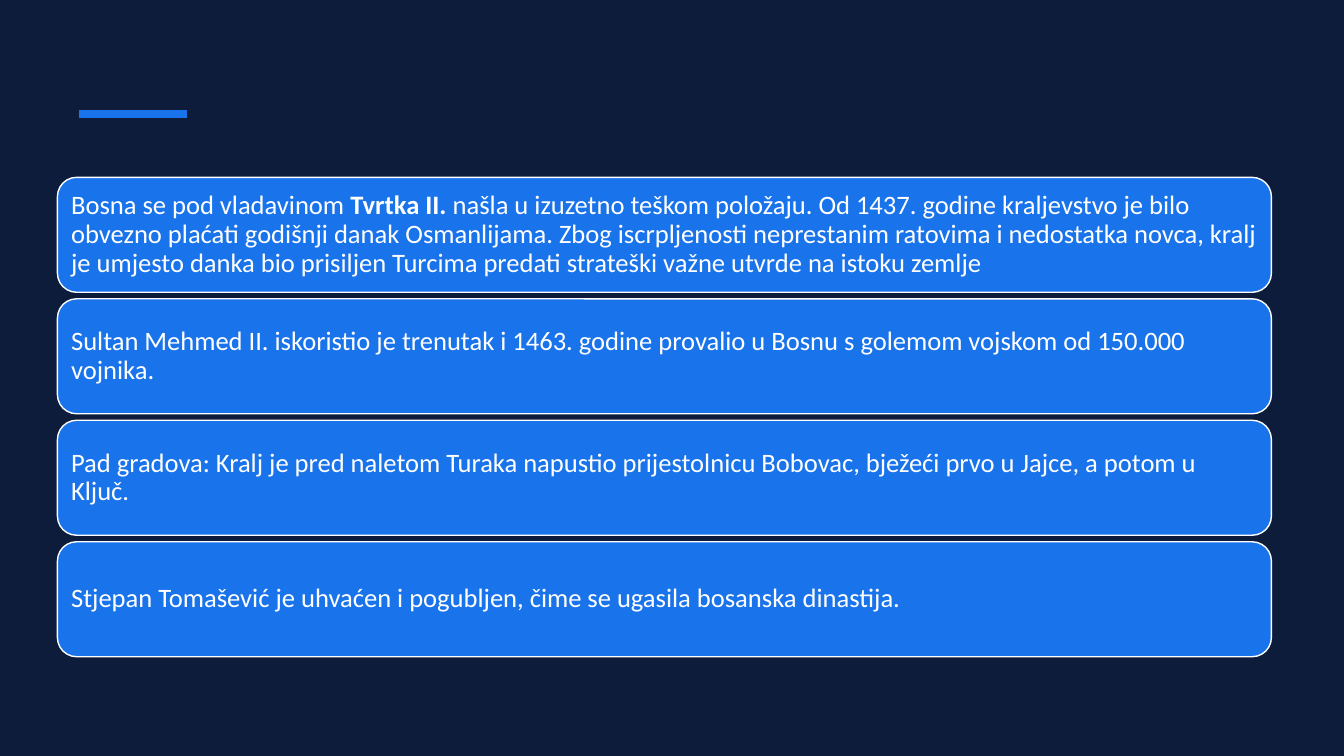
from pptx import Presentation
from pptx.dml.color import RGBColor
from pptx.enum.shapes import MSO_CONNECTOR, MSO_SHAPE
from pptx.enum.text import MSO_ANCHOR, PP_ALIGN
from pptx.oxml.ns import qn
from pptx.util import Inches, Pt
from lxml.etree import SubElement

COLORS = {"background": "0D1C3B", "accent": "1973EB", "light": "FFFFFF"}

# Each event is a list of (text, bold) runs.
EVENTS = [
    [
        ("Bosna se pod vladavinom ", False),
        ("Tvrtka II. ", True),
        ("našla u izuzetno teškom položaju. Od 1437. godine kraljevstvo je bilo "
         "obvezno plaćati godišnji danak Osmanlijama. Zbog iscrpljenosti "
         "neprestanim ratovima i nedostatka novca, kralj je umjesto danka bio "
         "prisiljen Turcima predati strateški važne utvrde na istoku zemlje", False),
    ],
    [("Sultan Mehmed II. iskoristio je trenutak i 1463. godine provalio u Bosnu "
      "s golemom vojskom od 150.000 vojnika.", False)],
    [("Pad gradova: Kralj je pred naletom Turaka napustio prijestolnicu Bobovac, "
      "bježeći prvo u Jajce, a potom u Ključ.", False)],
    [("Stjepan Tomašević je uhvaćen i pogubljen, čime se ugasila bosanska "
      "dinastija.", False)],
]

CARD_LEFT, CARD_TOP = 0.57, 1.76
CARD_WIDTH, CARD_HEIGHT = 12.04, 1.14
CARD_STEP = 1.205


def apply(target, values):
    for name, value in values.items():
        setattr(target, name, value)


class SlideBuilder:
    """Draws elements in the shared style on the current slide."""

    font = {"name": "Calibri", "size": Pt(19)}
    frame = {"word_wrap": True, "vertical_anchor": MSO_ANCHOR.MIDDLE,
             **{f"margin_{side}": Inches(0.08)
                for side in ("left", "top", "right", "bottom")}}
    paragraph = {"alignment": PP_ALIGN.LEFT, "line_spacing": 0.9}

    def __init__(self, slide):
        self.slide = slide
        self.paint(slide.background.fill, "background")

    def paint(self, fill, color):
        fill.solid()
        fill.fore_color.rgb = RGBColor.from_string(COLORS[color])

    def rule(self, left, right, y, weight):
        line = self.slide.shapes.add_connector(
            MSO_CONNECTOR.STRAIGHT, Inches(left), Inches(y), Inches(right), Inches(y))
        self.paint(line.line.fill, "accent")
        line.line.width = Pt(weight)
        SubElement(line._element.spPr, qn("a:effectLst"))

    def card(self, top, runs):
        card = self.slide.shapes.add_shape(
            MSO_SHAPE.ROUNDED_RECTANGLE, Inches(CARD_LEFT), Inches(top),
            Inches(CARD_WIDTH), Inches(CARD_HEIGHT))
        card.shadow.inherit = False
        self.paint(card.fill, "accent")
        self.paint(card.line.fill, "light")
        card.line.width = Pt(1)
        apply(card.text_frame, self.frame)
        paragraph = card.text_frame.paragraphs[0]
        apply(paragraph, self.paragraph)
        for text, bold in runs:
            run = paragraph.add_run()
            run.text = text
            apply(run.font, {**self.font, "bold": bold})
            self.paint(run.font.fill, "light")


def main():
    deck = Presentation()
    apply(deck, {"slide_width": Inches(13.33), "slide_height": Inches(7.5)})
    builder = SlideBuilder(deck.slides.add_slide(deck.slide_layouts[6]))
    builder.rule(0.78, 1.85, 1.13, 6)
    for index, event in enumerate(EVENTS):
        builder.card(CARD_TOP + index * CARD_STEP, event)
    deck.save("out.pptx")


if __name__ == "__main__":
    main()
